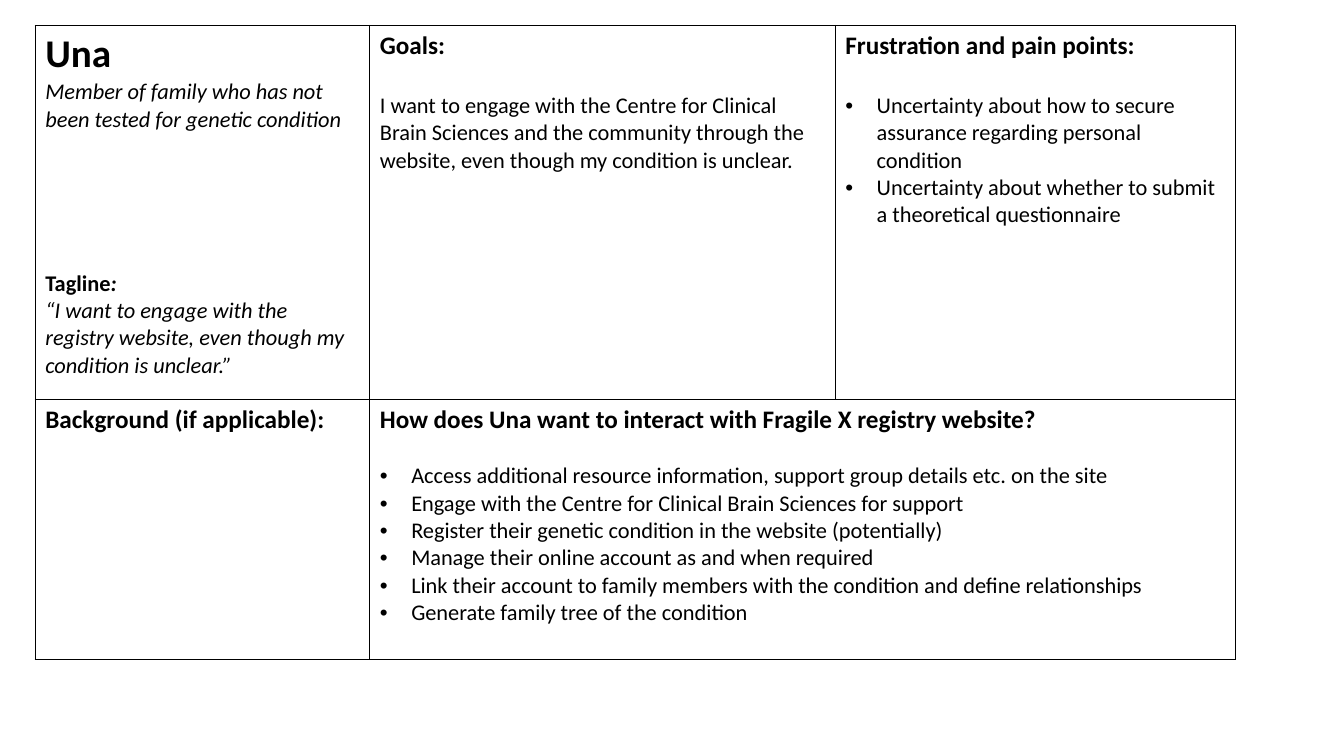
from dataclasses import dataclass

from lxml import etree
from pptx import Presentation
from pptx import util as u
from pptx.dml import color
from pptx.oxml import ns
from pptx.table import _Cell
from pptx.text.text import _Paragraph

COLOURS = {"ink": "000000", "paper": "FFFFFF"}
FONT = "Calibri"
BORDER = u.Pt(1)
BULLET_INDENT = u.Cm(0.79)
COLUMN_WIDTHS = [u.Cm(8.43), u.Cm(11.73), u.Cm(10.08)]
ROW_HEIGHTS = [u.Cm(9.42), u.Cm(6.55)]


@dataclass
class Line:
    """One paragraph; gap is the space above it in points."""
    text: str
    size: int = 16
    bold: bool = False
    italic: bool = False
    bullet: bool = False
    gap: float = 0
    italic_tail: str = ""


def heading(label: str) -> Line:
    return Line(label, size=18, bold=True)


def bullet_list(items: list[str], gap: float) -> list[Line]:
    return [Line(item, bullet=True, gap=0 if index else gap)
            for index, item in enumerate(items)]


# Persona content, keyed by row and column
PERSONA: dict[tuple[int, int], list[Line]] = {
    (0, 0): [
        Line("Una", size=28, bold=True),
        Line("Member of family who has not been tested for genetic condition", italic=True),
        Line("Tagline", bold=True, gap=97.6, italic_tail=":"),
        Line("“I want to engage with the registry website, even though my condition "
             "is unclear.”", italic=True),
    ],
    (0, 1): [
        heading("Goals:"),
        Line("I want to engage with the Centre for Clinical Brain Sciences and the community "
             "through the website, even though my condition is unclear.", gap=22),
    ],
    (0, 2): [
        heading("Frustration and pain points:"),
        *bullet_list([
            "Uncertainty about how to secure assurance regarding personal condition",
            "Uncertainty about whether to submit a theoretical questionnaire",
        ], gap=22),
    ],
    (1, 0): [heading("Background (if applicable):")],
    (1, 1): [
        heading("How does Una want to interact with Fragile X registry website?"),
        *bullet_list([
            "Access additional resource information, support group details etc. on the site",
            "Engage with the Centre for Clinical Brain Sciences for support",
            "Register their genetic condition in the website (potentially)",
            "Manage their online account as and when required",
            "Link their account to family members with the condition and define relationships",
            "Generate family tree of the condition",
        ], gap=19.5),
    ],
}


def add_bullet(paragraph: _Paragraph) -> None:
    properties = paragraph._p.get_or_add_pPr()
    properties.set("marL", str(BULLET_INDENT))
    properties.set("indent", str(-BULLET_INDENT))
    etree.SubElement(properties, ns.qn("a:buFont"), typeface="Arial")
    etree.SubElement(properties, ns.qn("a:buChar"), char="•")


def write_line(paragraph: _Paragraph, line: Line) -> None:
    paragraph.text = line.text
    paragraph.space_before = u.Pt(line.gap)
    if line.italic_tail:
        paragraph.add_run().text = line.italic_tail
    for index, run in enumerate(paragraph.runs):
        run.font.name = FONT
        run.font.size = u.Pt(line.size)
        run.font.bold = line.bold
        run.font.italic = line.italic or index > 0
        run.font.color.rgb = color.RGBColor.from_string(COLOURS["ink"])
    if line.bullet:
        add_bullet(paragraph)


def style_cell(cell: _Cell) -> None:
    properties = cell._tc.get_or_add_tcPr()
    for side in ("lnL", "lnR", "lnT", "lnB"):
        border = etree.SubElement(properties, ns.qn(f"a:{side}"), w=str(BORDER))
        fill = etree.SubElement(border, ns.qn("a:solidFill"))
        etree.SubElement(fill, ns.qn("a:srgbClr"), val=COLOURS["ink"])
    cell.fill.solid()
    cell.fill.fore_color.rgb = color.RGBColor.from_string(COLOURS["paper"])


def fill_cell(cell: _Cell, lines: list[Line]) -> None:
    frame = cell.text_frame
    for index, line in enumerate(lines):
        write_line(frame.add_paragraph() if index else frame.paragraphs[0], line)


def main() -> None:
    presentation = Presentation()
    presentation.slide_width, presentation.slide_height = u.Cm(33.87), u.Cm(19.05)
    slide = presentation.slides.add_slide(presentation.slide_layouts[6])

    # Persona grid
    shape = slide.shapes.add_table(len(ROW_HEIGHTS), len(COLUMN_WIDTHS), u.Cm(0.89), u.Cm(0.64),
                                   sum(COLUMN_WIDTHS), sum(ROW_HEIGHTS))
    table = shape.table
    table.first_row = table.horz_banding = False
    for column, width in zip(table.columns, COLUMN_WIDTHS):
        column.width = width
    for row, height in zip(table.rows, ROW_HEIGHTS):
        row.height = height
    for cell in table.iter_cells():
        style_cell(cell)

    # The interaction list spans the two right-hand columns
    table.cell(1, 1).merge(table.cell(1, 2))
    for position, lines in PERSONA.items():
        fill_cell(table.cell(*position), lines)

    presentation.save("out.pptx")


if __name__ == "__main__":
    main()
